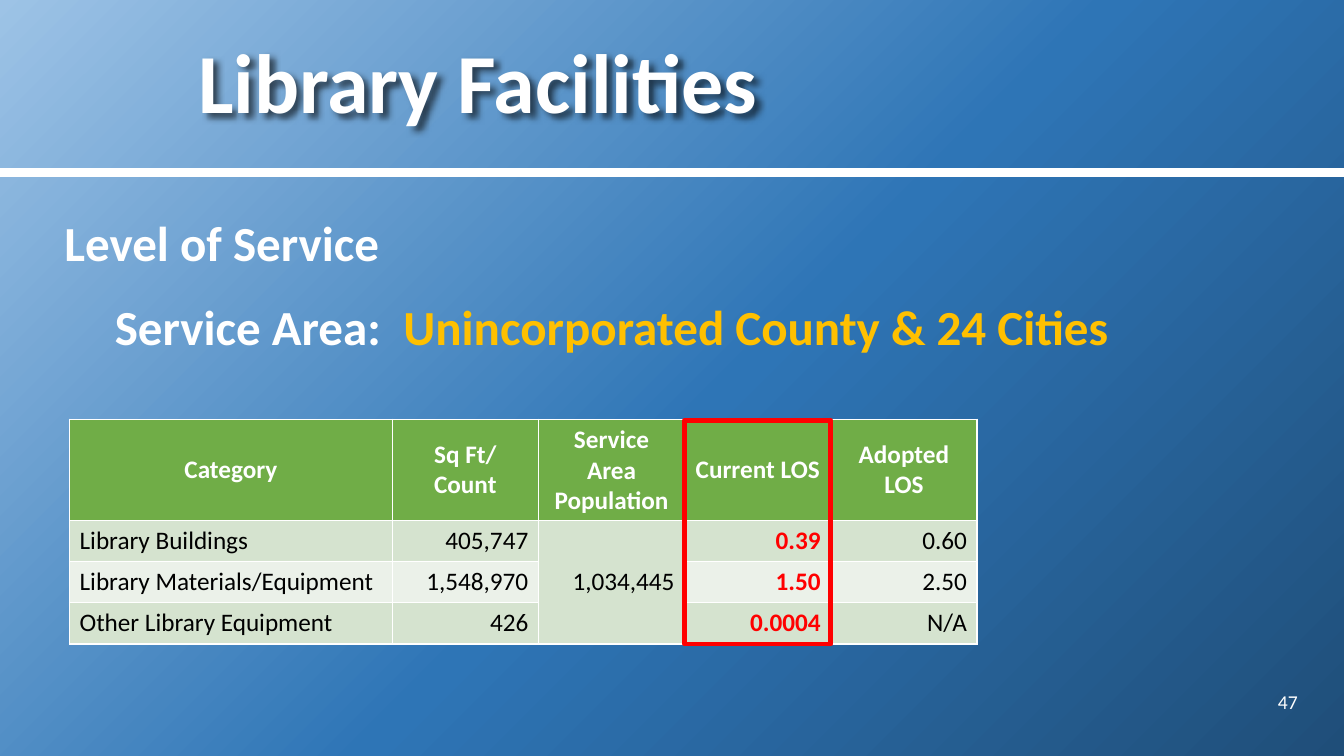
from lxml import etree
from pptx import Presentation
from pptx.dml.color import RGBColor
from pptx.enum.shapes import MSO_CONNECTOR as Connector, MSO_SHAPE as Shape
from pptx.enum.text import MSO_ANCHOR as Anchor, PP_ALIGN as Align
from pptx.oxml import parse_xml
from pptx.oxml.ns import nsdecls, qn
from pptx.util import Inches, Pt

WIDTH, HEIGHT = 13.33, 7.5
HEADER_HEIGHT = 1.71
WHITE, BLACK, RED, GOLD, GREEN = "FFFFFF", "000000", "FF0000", "FFC000", "70AD47"
BANDS = ("D5E3CF", "EBF1E9")
COLUMNS = (3.2, 1.45, 1.45, 1.45, 1.45)
ROWS = (0.9, 0.41, 0.41, 0.41)
POPULATION, CURRENT = 2, 3
SERVICE_LEVELS = (
    ("Category", "Sq Ft/ Count", "Service Area Population", "Current LOS", "Adopted LOS"),
    ("Library Buildings", "405,747", "1,034,445", "0.39", "0.60"),
    ("Library Materials/Equipment", "1,548,970", "", "1.50", "2.50"),
    ("Other Library Equipment", "426", "", "0.0004", "N/A"),
)


def rgb(value):
    """Turn a hex string into a colour."""
    return RGBColor.from_string(value)


def inches(box):
    """Convert a box in inches to lengths."""
    return [Inches(length) for length in box]


def set_font(font, size, color, bold=False):
    """Apply the slide's typeface with a size, colour and weight."""
    font.name, font.size, font.bold = "Calibri", Pt(size), bold
    font.color.rgb = rgb(color)


def add_background(slide):
    """Fill the slide with a diagonal blue gradient."""
    slide.background.fill.gradient()
    gradient = slide.background._cSld.find(".//" + qn("a:gradFill"))
    stops = "".join(
        f'<a:gs pos="{share * 1000}"><a:srgbClr val="{color}"/></a:gs>'
        for share, color in ((0, "9DC3E6"), (53, "2E75B6"), (100, "1F4E79")))
    gradient.getparent().replace(gradient, parse_xml(
        f'<a:gradFill {nsdecls("a")} rotWithShape="1"><a:gsLst>{stops}</a:gsLst>'
        '<a:lin ang="2700000" scaled="0"/></a:gradFill>'))


def add_header(slide, box):
    """Place the shadowed title and the rule beneath it."""
    left, top, width, height = box
    rule = slide.shapes.add_connector(
        Connector.STRAIGHT, *inches((left, top + height, left + width, top + height)))
    rule.line.color.rgb = rgb(WHITE)
    rule.line.width = Pt(6)
    etree.SubElement(rule._element.spPr, qn("a:effectLst"))

    title = slide.shapes.title
    indent = 0.14 * width
    title.left, title.top, title.width, title.height = inches(
        (left + indent, top, 0.83 * width, height))
    frame = title.text_frame
    frame.text = "Library Facilities"
    frame.vertical_anchor = Anchor.MIDDLE
    paragraph = frame.paragraphs[0]
    paragraph.alignment, paragraph.line_spacing = Align.LEFT, 0.9
    set_font(paragraph.font, 60, WHITE, True)
    title._element.spPr.append(parse_xml(
        f'<a:effectLst {nsdecls("a")}><a:outerShdw blurRad="50800" dist="50800" dir="2700000">'
        '<a:srgbClr val="000000"><a:alpha val="60000"/></a:srgbClr></a:outerShdw></a:effectLst>'))


def add_service_text(slide, box):
    """Write the level of service heading and its service area."""
    frame = slide.shapes.add_textbox(*inches(box)).text_frame
    frame.word_wrap = True
    lines = ((("Level of Service", WHITE),),
             (("\tService Area:  ", WHITE), ("Unincorporated County & 24 Cities", GOLD)))
    for index, parts in enumerate(lines):
        paragraph = frame.add_paragraph() if index else frame.paragraphs[0]
        paragraph.line_spacing = 1.2
        paragraph.space_before = Pt(10 if index else 0)
        for text, color in parts:
            run = paragraph.add_run()
            run.text = text
            set_font(run.font, 35, color, True)


def format_cell(cell, row, column):
    """Style one table cell by its row and column."""
    header, current = row == 0, column == CURRENT
    cell.fill.solid()
    cell.fill.fore_color.rgb = rgb(GREEN if header else BANDS[(row - 1) % 2])
    cell.vertical_anchor = Anchor.MIDDLE if header or column == POPULATION else Anchor.TOP
    paragraph = cell.text_frame.paragraphs[0]
    paragraph.alignment = Align.CENTER if header else Align.RIGHT if column else Align.LEFT
    color = WHITE if header else RED if current else BLACK
    set_font(paragraph.font, 18, color, header or current)
    for index, side in enumerate(("lnL", "lnR", "lnT", "lnB")):
        cell._tc.tcPr.insert(index, parse_xml(
            f'<a:{side} {nsdecls("a")} w="12700"><a:solidFill>'
            f'<a:srgbClr val="{WHITE}"/></a:solidFill></a:{side}>'))


def add_service_table(slide, left, top):
    """Build the service table and frame its current level column."""
    box = (left, top, sum(COLUMNS), sum(ROWS))
    table = slide.shapes.add_table(len(ROWS), len(COLUMNS), *inches(box)).table
    for column, width in zip(table.columns, COLUMNS):
        column.width = Inches(width)
    for row, height in zip(table.rows, ROWS):
        row.height = Inches(height)
    for row, values in enumerate(SERVICE_LEVELS):
        for column, value in enumerate(values):
            cell = table.cell(row, column)
            cell.text = value
            format_cell(cell, row, column)
    table.cell(1, POPULATION).merge(table.cell(len(ROWS) - 1, POPULATION))

    highlight = slide.shapes.add_shape(Shape.RECTANGLE, *inches(
        (left + sum(COLUMNS[:CURRENT]), top + 0.01, COLUMNS[CURRENT], 2.22)))
    highlight.shadow.inherit = False
    highlight.fill.background()
    highlight.line.color.rgb = rgb(RED)
    highlight.line.width = Pt(3.25)


def add_page_number(slide, box):
    """Write the page number at the lower right."""
    frame = slide.shapes.add_textbox(*inches(box)).text_frame
    frame.word_wrap = True
    frame.vertical_anchor = Anchor.MIDDLE
    paragraph = frame.paragraphs[0]
    paragraph.text = "47"
    paragraph.alignment = Align.RIGHT
    set_font(paragraph.font, 14, WHITE)


def main():
    """Build and save the library facilities slide."""
    presentation = Presentation()
    presentation.slide_width, presentation.slide_height = inches((WIDTH, HEIGHT))
    slide = presentation.slides.add_slide(presentation.slide_layouts[5])
    add_background(slide)
    add_header(slide, (0, 0, WIDTH, HEADER_HEIGHT))
    add_service_text(slide, (0.54, 1.94, 12.42, 1.9))
    add_service_table(slide, 0.69, 4.16)
    add_page_number(slide, (12.08, 6.76, 0.89, 0.4))
    presentation.save("out.pptx")


if __name__ == "__main__":
    main()
